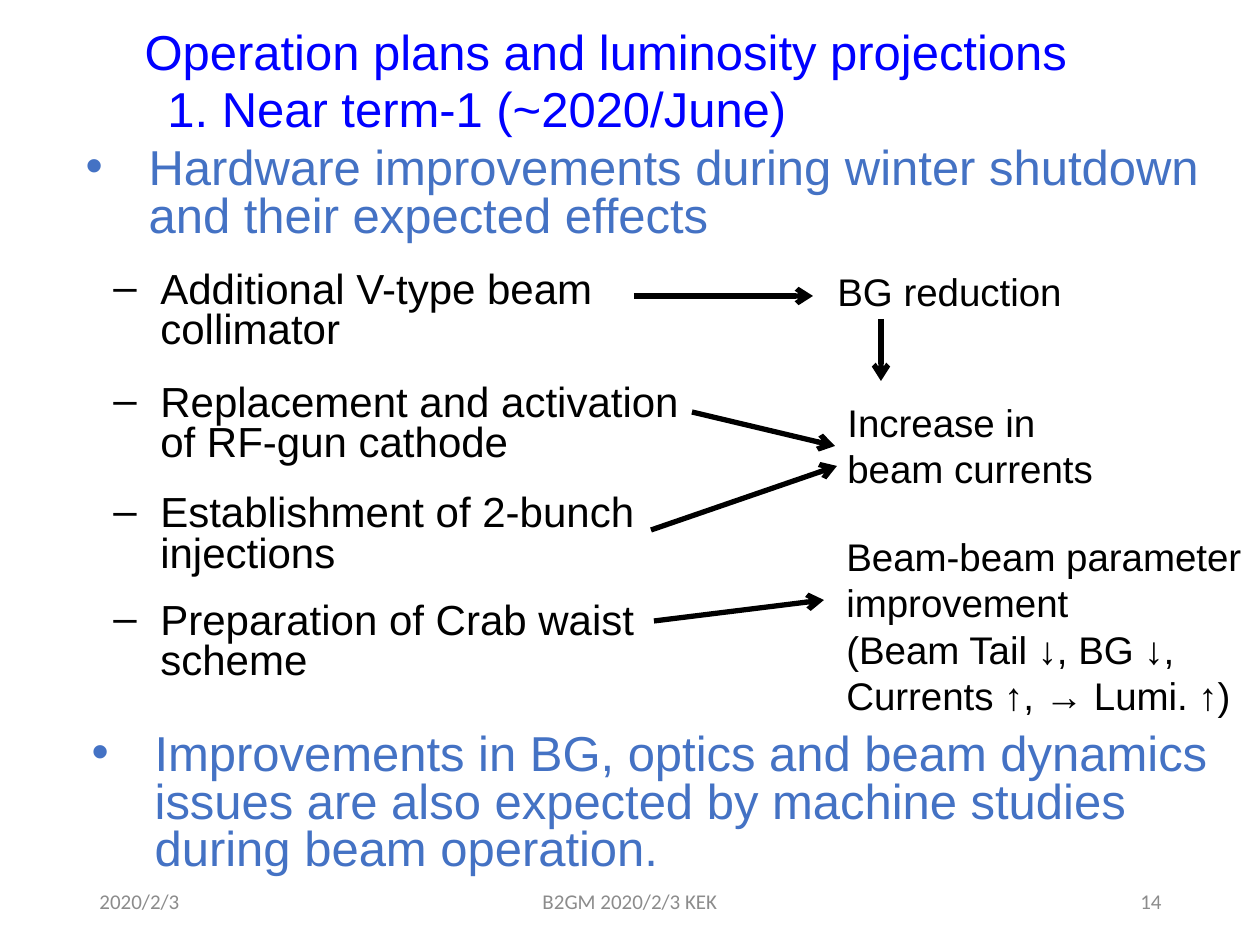
import pptx
import pptx.util
import pptx.dml.color
import pptx.enum.shapes
import pptx.enum.text
import pptx.oxml
import pptx.oxml.ns

PIXEL = 914400 / 126
ALIGN = pptx.enum.text.PP_ALIGN
ANCHOR = pptx.enum.text.MSO_ANCHOR
BLUE, ACCENT, BLACK, GRAY = "0000FF", "4472C4", "000000", "8C8C8C"

TITLE = {"size": 28, "color": BLUE}
HEADLINE = {"size": 28, "color": ACCENT, "bullet": "•", "indent": 63}
ITEM = {"size": 24, "color": BLACK, "bullet": "‒", "indent": 47, "gap": 17}
EFFECT = {"size": 22, "color": BLACK}
FOOTER = {"size": 12, "color": GRAY, "font": "Calibri", "anchor": ANCHOR.MIDDLE}


def px(length):
    return pptx.util.Emu(round(length * PIXEL))


def color(hex_string):
    return pptx.dml.color.RGBColor.from_string(hex_string)


def set_attributes(target, values):
    for name, value in values.items():
        setattr(target, name, value)


def add_element(parent, tag, **attributes):
    element = pptx.oxml.ns.qn(tag)
    child = parent.makeelement(element, attributes)
    parent.append(child)
    return child


def add_bullet(paragraph, character, indent):
    properties = paragraph._p.get_or_add_pPr()
    properties.set("marL", str(px(indent)))
    properties.set("indent", str(-px(indent)))
    add_element(properties, "a:buFont", typeface="Arial")
    add_element(properties, "a:buChar", char=character)


def write_text(shape, lines, style):
    frame = shape.text_frame
    set_attributes(frame, {
        "word_wrap": style.get("wrap", True),
        "auto_size": pptx.enum.text.MSO_AUTO_SIZE.NONE,
        "vertical_anchor": style.get("anchor", ANCHOR.TOP),
    })
    for index, line in enumerate(lines):
        paragraph = frame.paragraphs[0] if index == 0 else frame.add_paragraph()
        paragraph.text = line
        if "bullet" in style:
            add_bullet(paragraph, style["bullet"], style["indent"])
        set_attributes(paragraph, {
            "alignment": style.get("align", ALIGN.LEFT),
            "line_spacing": 0.8 if "bullet" in style else 1.0,
            "space_before": pptx.util.Pt(style.get("gap", 0) if index else 0),
        })
        set_attributes(paragraph.font, {
            "name": style.get("font", "Arial"),
            "size": pptx.util.Pt(style["size"]),
        })
        paragraph.font.color.rgb = color(style["color"])


def add_text(slide, box, lines, style):
    shape = slide.shapes.add_textbox(*map(px, box))
    write_text(shape, lines, style)
    return shape


def fill_placeholder(shape, box, lines, style):
    set_attributes(shape, dict(zip(("left", "top", "width", "height"), map(px, box))))
    write_text(shape, lines, style)


def add_arrow(slide, start, end, target=None):
    connector = slide.shapes.add_connector(
        pptx.enum.shapes.MSO_CONNECTOR.STRAIGHT, *map(px, start + end))
    if target is not None:
        connector.end_connect(target, 1)
    connector.line.width = pptx.util.Pt(3)
    connector.line.color.rgb = color(BLACK)
    add_element(connector.line._get_or_add_ln(), "a:tailEnd", type="arrow")
    add_element(connector._element.spPr, "a:effectLst")


def add_header(slide, box):
    left, top, width, height = box
    fill_placeholder(slide.shapes.title, (left, top, width, height),
                     ["Operation plans and luminosity projections"], TITLE)
    add_text(slide, (left + 23, top + 57, width - 48, height),
             ["1. Near term-1 (~2020/June)"], TITLE)


def add_headlines(slide, box):
    left, top, width, height = box
    first, second = list(slide.placeholders)[1:3]
    fill_placeholder(first, (left, top, width, 107),
                     ["Hardware improvements during winter shutdown and their expected effects"],
                     HEADLINE)
    fill_placeholder(second, (left + 6, top + height - 155, width, 155),
                     ["Improvements in BG, optics and beam dynamics issues are also "
                      "expected by machine studies during beam operation."], HEADLINE)


def add_improvements(slide, box):
    left, top, width, height = box
    for offset, size, lines in (
        (0, 94, ["Additional V-type beam collimator"]),
        (113, 207, ["Replacement and activation of RF-gun cathode",
                    "Establishment of 2-bunch injections"]),
        (height - 94, 94, ["Preparation of Crab waist scheme"]),
    ):
        add_text(slide, (left, top + offset, width, size), lines, ITEM)


def add_effects(slide, box):
    left, top, width, height = box
    add_text(slide, (left, top, 252, 59), ["BG reduction"], {**EFFECT, "wrap": False})
    currents = add_text(slide, (left + 10, top + 131, 280, 106),
                        ["Increase in beam currents"], EFFECT)
    add_text(slide, (left + 9, top + height - 199, width - 9, 199),
             ["Beam-beam parameter improvement",
              "(Beam Tail ↓, BG ↓, Currents ↑, → Lumi. ↑)"], EFFECT)
    for start, end, target in (
        ((-191, 34), (-12, 34), None),
        ((56, 57), (56, 119), None),
        ((-133, 150), (10, 184), currents),
        ((-174, 268), (12, 204), None),
        ((-171, 359), (-1, 338), None),
    ):
        add_arrow(slide, (left + start[0], top + start[1]),
                  (left + end[0], top + end[1]), target)


def add_footer(slide, box):
    left, top, width, height = box
    side, center = 284, 426
    for offset, size, text, align in (
        (0, side, "2020/2/3", ALIGN.LEFT),
        ((width - center) // 2, center, "B2GM 2020/2/3 KEK", ALIGN.CENTER),
        (width - side, side, "14", ALIGN.RIGHT),
    ):
        add_text(slide, (left + offset, top, size, height), [text],
                 {**FOOTER, "align": align})


def main():
    presentation = pptx.Presentation()
    set_attributes(presentation, {"slide_width": px(1260), "slide_height": px(945)})
    slide = presentation.slides.add_slide(presentation.slide_layouts[3])
    add_header(slide, (132, 15, 964, 72))
    add_headlines(slide, (73, 142, 1147, 741))
    add_improvements(slide, (101, 266, 595, 425))
    add_effects(slide, (825, 262, 435, 464))
    add_footer(slide, (87, 876, 1087, 50))
    presentation.save("out.pptx")


if __name__ == "__main__":
    main()
